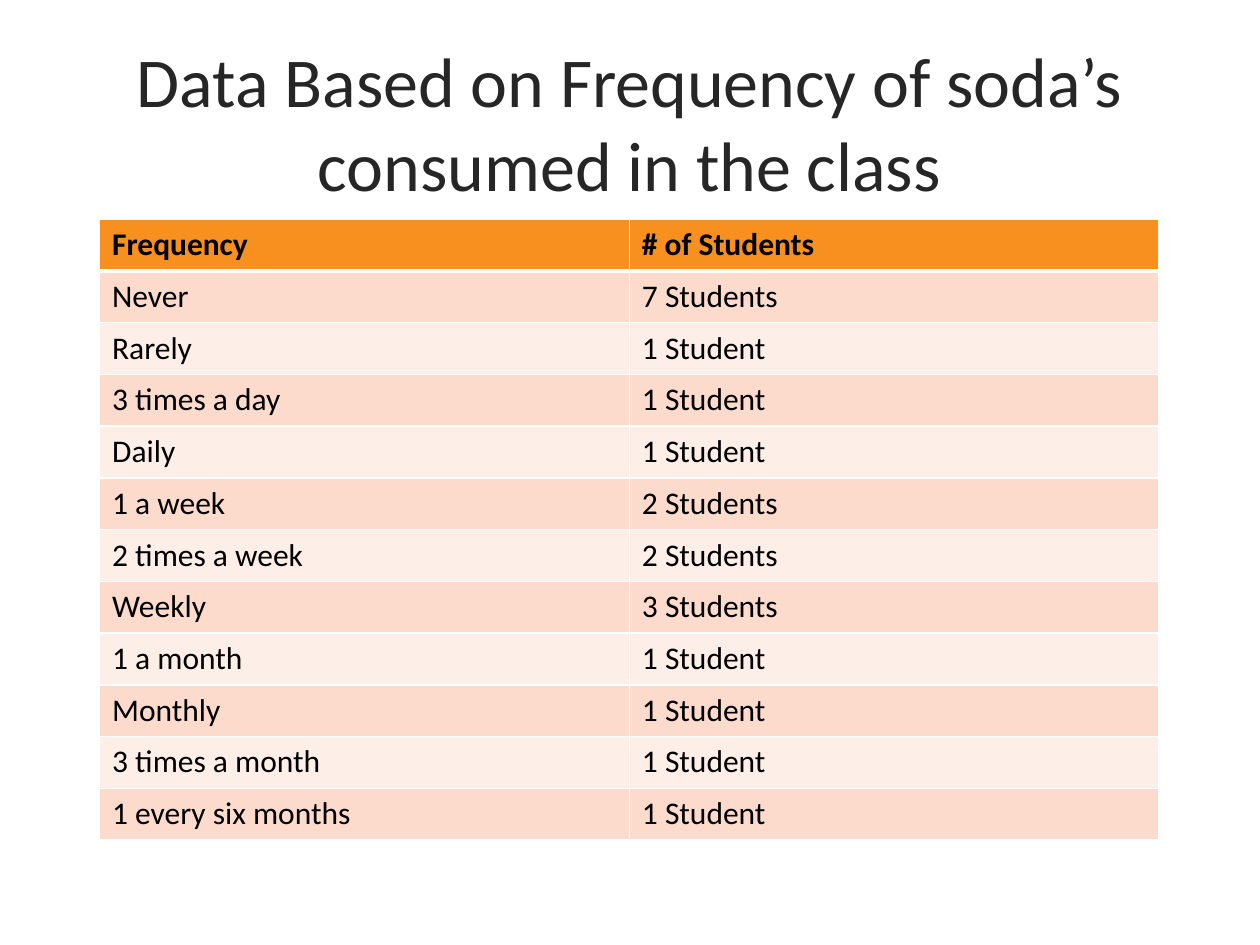
import lxml.etree
import pptx
import pptx.dml.color
import pptx.enum.text
import pptx.oxml.ns
import pptx.util

Inches = pptx.util.Inches

TITLE = "Data Based on Frequency of soda’s consumed in the class"
ROWS = [
    ("Frequency", "# of Students"),
    ("Never", "7 Students"),
    ("Rarely", "1 Student"),
    ("3 times a day", "1 Student"),
    ("Daily", "1 Student"),
    ("1 a week", "2 Students"),
    ("2 times a week", "2 Students"),
    ("Weekly", "3 Students"),
    ("1 a month", "1 Student"),
    ("Monthly", "1 Student"),
    ("3 times a month", "1 Student"),
    ("1 every six months", "1 Student"),
]
COLORS = {
    "title": "262626",
    "text": "000000",
    "header": "F7901E",
    "odd": "FCDBCD",
    "even": "FDEEE8",
    "border": "FFFFFF",
}
FONT = "Calibri"
LEFT, WIDTH = 0.79, 8.41
TITLE_TOP, TITLE_HEIGHT = 0.34, 1.25
TABLE_TOP, TABLE_HEIGHT = 1.74, 4.93
THIN, THICK = 1, 3


def rgb(name):
    return pptx.dml.color.RGBColor.from_string(COLORS[name])


def write(frame, text, size=18, color="text", bold=False, align=None):
    para = frame.paragraphs[0]
    para.alignment = align
    span = para.add_run()
    span.text = text
    span.font.name = FONT
    span.font.size = pptx.util.Pt(size)
    span.font.bold = bold
    span.font.color.rgb = rgb(color)


def add_borders(cell, **widths):
    qn = pptx.oxml.ns.qn
    properties = cell._tc.get_or_add_tcPr()
    for side in ("L", "R", "T", "B"):
        width = pptx.util.Pt(widths.get(side, THIN))
        line = lxml.etree.SubElement(properties, qn(f"a:ln{side}"), w=str(width))
        fill = lxml.etree.SubElement(line, qn("a:solidFill"))
        lxml.etree.SubElement(fill, qn("a:srgbClr"), val=COLORS["border"])


def add_title(page):
    box = page.shapes.add_textbox(
        Inches(LEFT), Inches(TITLE_TOP), Inches(WIDTH), Inches(TITLE_HEIGHT)
    )
    frame = box.text_frame
    frame.word_wrap = True
    frame.vertical_anchor = pptx.enum.text.MSO_ANCHOR.MIDDLE
    write(frame, TITLE, size=40, color="title", align=pptx.enum.text.PP_ALIGN.CENTER)


def add_frequency_table(page):
    table = page.shapes.add_table(
        len(ROWS), len(ROWS[0]),
        Inches(LEFT), Inches(TABLE_TOP), Inches(WIDTH), Inches(TABLE_HEIGHT),
    ).table
    table.horz_banding = False
    for row_index, row in enumerate(ROWS):
        is_header = row_index == 0
        band = "header" if is_header else ("even", "odd")[row_index % 2]
        edges = {0: {"B": THICK}, 1: {"T": THICK}}.get(row_index, {})
        for column_index, text in enumerate(row):
            cell = table.cell(row_index, column_index)
            add_borders(cell, **edges)
            cell.fill.solid()
            cell.fill.fore_color.rgb = rgb(band)
            write(cell.text_frame, text, bold=is_header)


def main():
    deck = pptx.Presentation()
    deck.slide_width, deck.slide_height = Inches(10), Inches(7.5)
    page = deck.slides.add_slide(deck.slide_layouts[6])
    add_title(page)
    add_frequency_table(page)
    deck.save("out.pptx")


if __name__ == "__main__":
    main()
